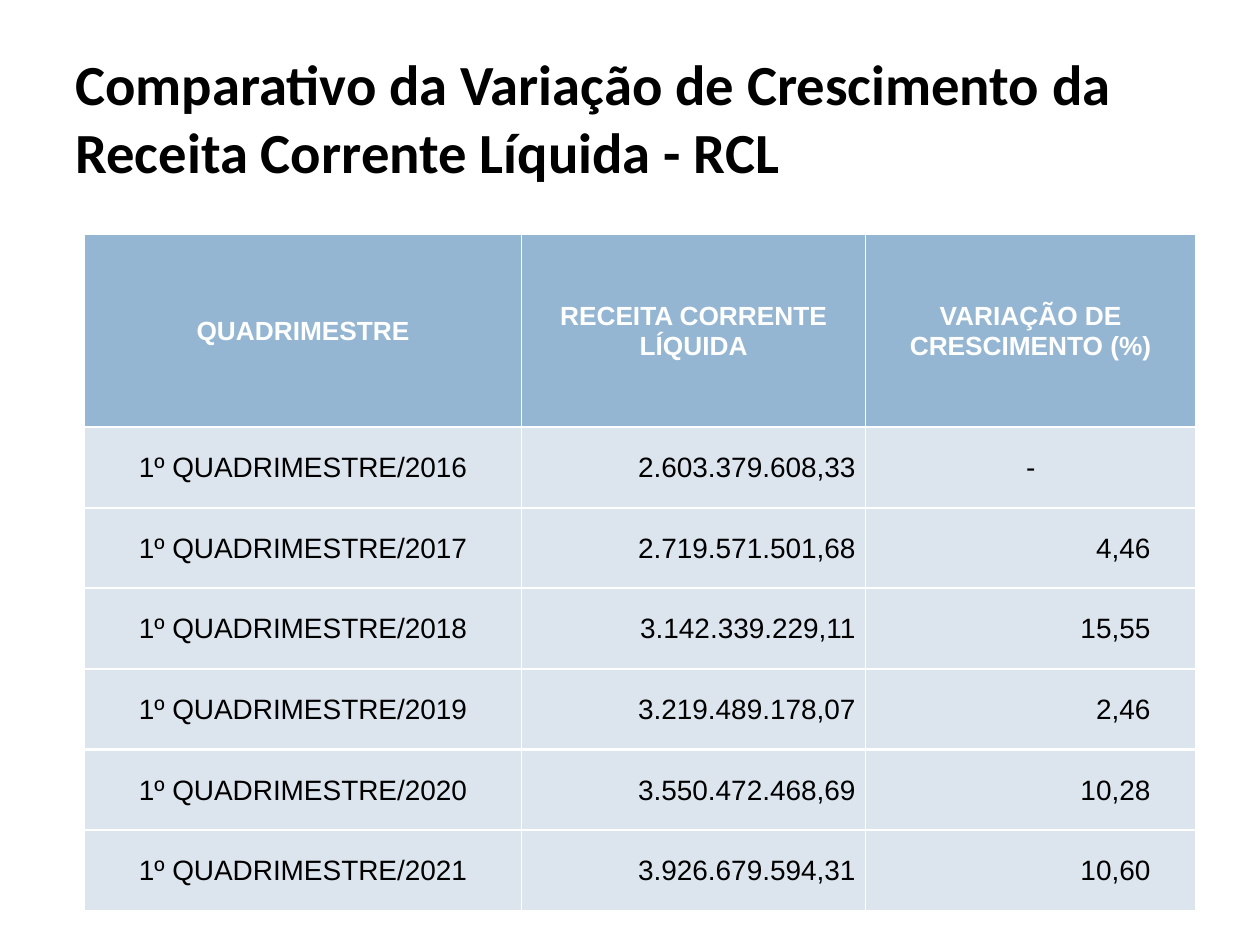
"""Build the slide comparing growth of net current revenue by period."""
import pptx
import pptx.dml.color
import pptx.enum.text
import pptx.oxml
import pptx.oxml.ns
import pptx.util
from dataclasses import dataclass

Inches, Pt = pptx.util.Inches, pptx.util.Pt
RGB = pptx.dml.color.RGBColor.from_string
ALIGN = pptx.enum.text.PP_ALIGN
MIDDLE = pptx.enum.text.MSO_ANCHOR.MIDDLE

TITLE = "Comparativo da Variação de Crescimento da Receita Corrente Líquida - RCL"
HEADER = ("QUADRIMESTRE", "RECEITA CORRENTE LÍQUIDA", "VARIAÇÃO DE CRESCIMENTO (%)")
RESULTS = [
    (2016, "2.603.379.608,33", "-"),
    (2017, "2.719.571.501,68", "4,46"),
    (2018, "3.142.339.229,11", "15,55"),
    (2019, "3.219.489.178,07", "2,46"),
    (2020, "3.550.472.468,69", "10,28"),
    (2021, "3.926.679.594,31", "10,60"),
]
COL_WIDTHS = (3.47, 2.73, 2.62)
RIGHT_INSETS = (0.01, 0.08, 0.36)
HEADER_HEIGHT, ROW_HEIGHT = 1.53, 0.64


@dataclass(frozen=True)
class Theme:
    """Colours and type formats of the slide."""
    header_fill: str = "94B6D2"
    body_fill: str = "DCE5EE"
    border: str = "FFFFFF"
    title: tuple = ("Calibri", 32.4, True, "000000")
    header: tuple = ("Arial", 15, True, "FFFFFF")
    body: tuple = ("Arial", 16, False, "000000")


THEME = Theme()


def set_all(target, values):
    """Set each named attribute of the target."""
    for name, value in values.items():
        setattr(target, name, value)


def write(tf, text, style, align):
    """Write one formatted paragraph into a text frame."""
    p = tf.paragraphs[0]
    p.alignment = align
    r = p.add_run()
    r.text = text
    name, size, bold, color = style
    set_all(r.font, {"name": name, "size": Pt(size), "bold": bold})
    r.font.color.rgb = RGB(color)


def add_borders(cell, top, bottom):
    """Draw the four cell borders with the given widths in points."""
    tc_pr = cell._tc.get_or_add_tcPr()
    for side, width in (("L", 1), ("R", 1), ("T", top), ("B", bottom)):
        tc_pr.append(pptx.oxml.parse_xml(
            f'<a:ln{side} {pptx.oxml.ns.nsdecls("a")} w="{Pt(width)}"><a:solidFill>'
            f'<a:srgbClr val="{THEME.border}"/></a:solidFill></a:ln{side}>'))


def add_title(s):
    """Add the slide title."""
    tf = s.shapes.add_textbox(Inches(0.5), Inches(0.3), Inches(9), Inches(1.25)).text_frame
    set_all(tf, {"word_wrap": True, "vertical_anchor": MIDDLE})
    write(tf, TITLE, THEME.title, ALIGN.LEFT)


def add_results(s):
    """Add the table of revenue and growth."""
    rows = [HEADER] + [(f"1º QUADRIMESTRE/{year}", *values) for year, *values in RESULTS]
    heights = [HEADER_HEIGHT] + [ROW_HEIGHT] * len(RESULTS)
    table = s.shapes.add_table(len(rows), len(HEADER), Inches(0.67), Inches(1.86),
                               Inches(sum(COL_WIDTHS)), Inches(sum(heights))).table
    table.horz_banding = False
    for column, width in zip(table.columns, COL_WIDTHS):
        column.width = Inches(width)
    for i, (row, height) in enumerate(zip(rows, heights)):
        table.rows[i].height = Inches(height)
        is_header = i == 0
        for j, text in enumerate(row):
            cell = table.cell(i, j)
            centred = is_header or j == 0 or text == "-"
            set_all(cell, {
                "vertical_anchor": MIDDLE,
                "margin_left": Inches(0.01),
                "margin_top": Inches(0.01),
                "margin_right": Inches(0.01 if centred else RIGHT_INSETS[j]),
                "margin_bottom": 0,
            })
            add_borders(cell, 1 if is_header else 1.5, 1 if i == len(rows) - 1 else 1.5)
            cell.fill.solid()
            cell.fill.fore_color.rgb = RGB(THEME.header_fill if is_header else THEME.body_fill)
            write(cell.text_frame, text, THEME.header if is_header else THEME.body,
                  ALIGN.CENTER if centred else ALIGN.RIGHT)


def main():
    """Create and save the presentation."""
    prs = pptx.Presentation()
    set_all(prs, {"slide_width": Inches(10), "slide_height": Inches(7.5)})
    s = prs.slides.add_slide(prs.slide_layouts[6])
    add_title(s)
    add_results(s)
    prs.save("out.pptx")


if __name__ == "__main__":
    main()
